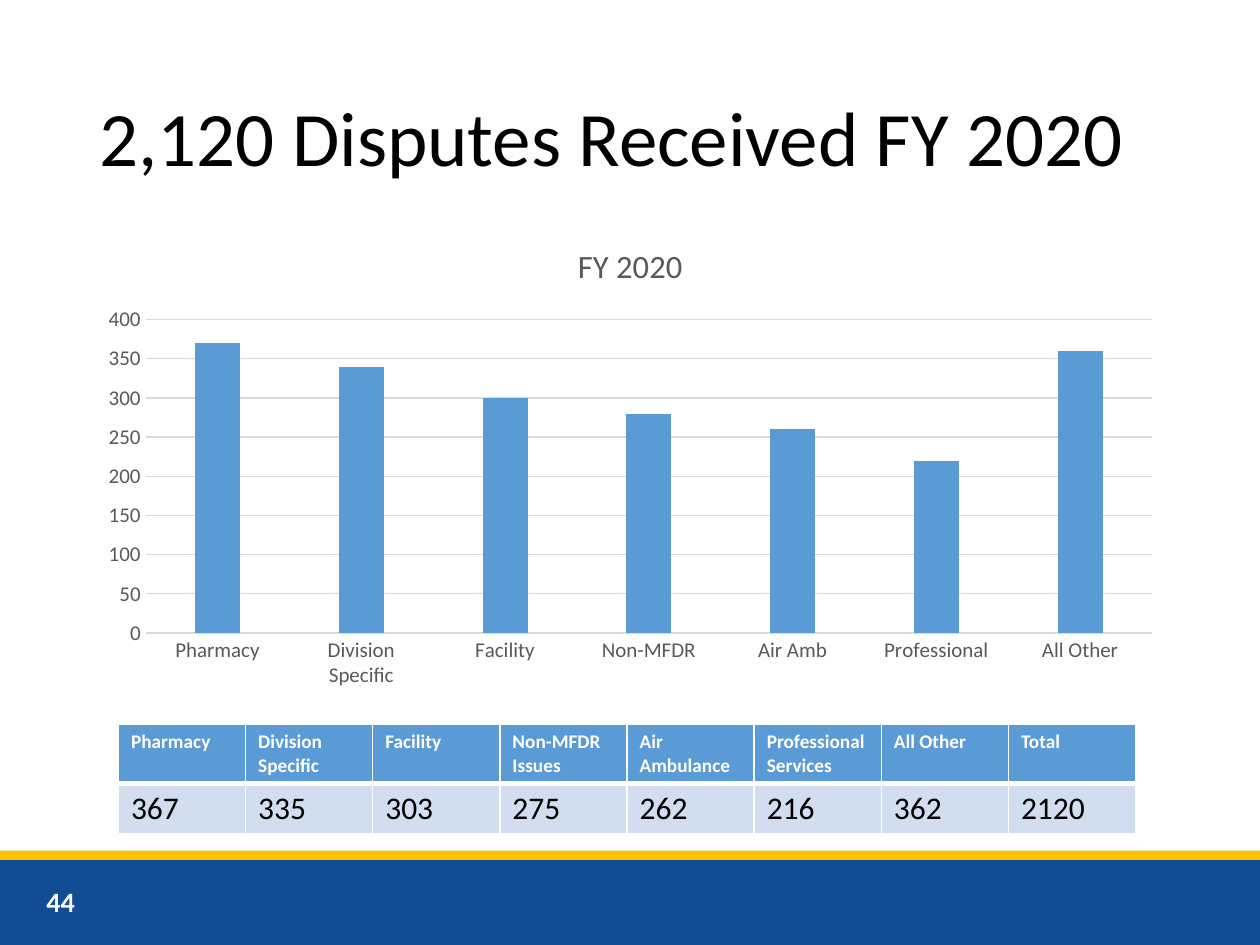
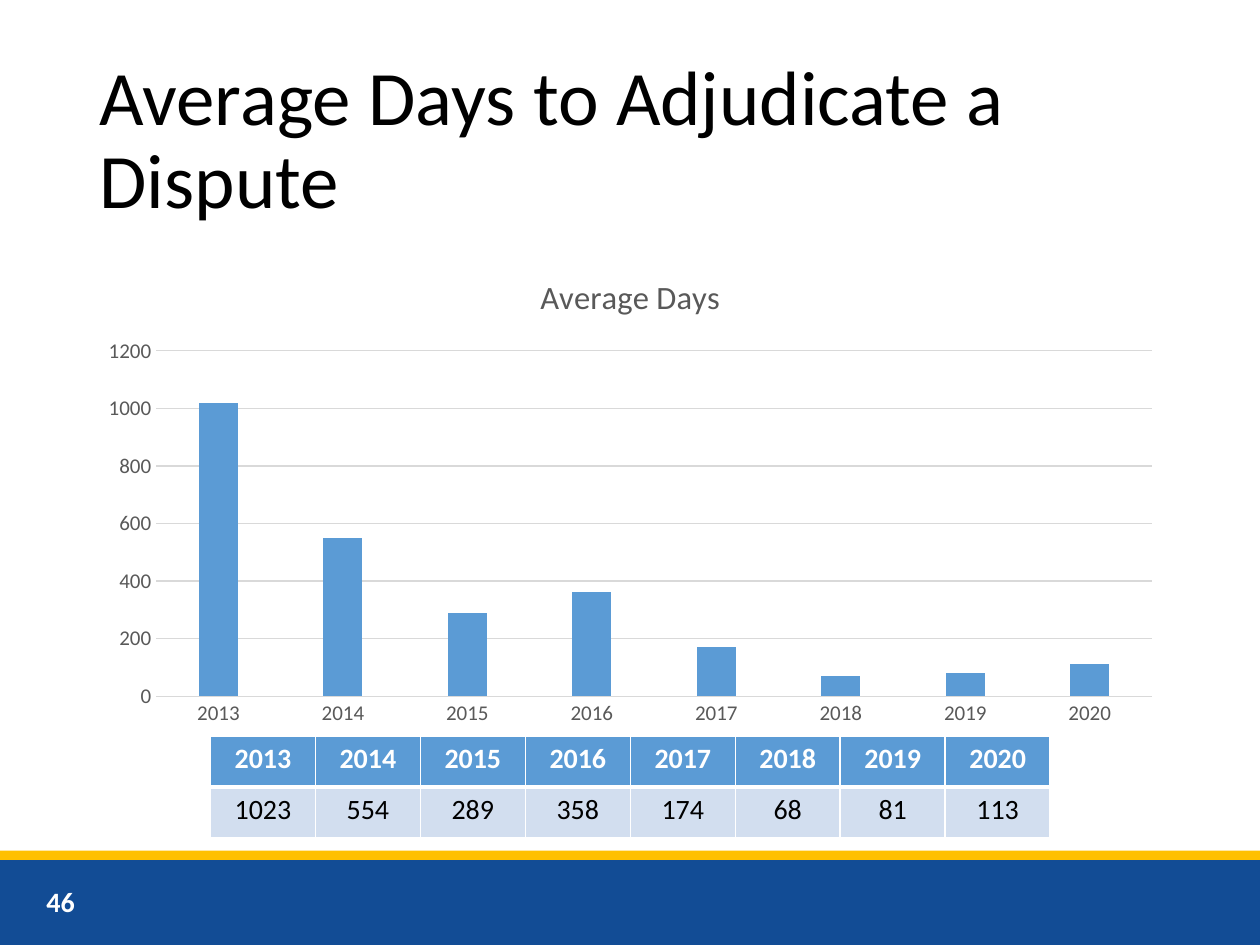
from pptx import Presentation
from pptx.chart.data import CategoryChartData
from pptx.dml.color import RGBColor
from pptx.enum.chart import XL_CHART_TYPE as ChartType, XL_TICK_MARK as TickMark
from pptx.enum.shapes import MSO_SHAPE as Preset
from pptx.enum.text import MSO_ANCHOR as Anchor, MSO_AUTO_SIZE as AutoSize, PP_ALIGN as Align
from pptx.oxml import parse_xml
from pptx.oxml.ns import nsdecls
from pptx.util import Inches, Pt

FONT = "Calibri"
COLORS = {
    "band": "124C95", "stripe": "FFC000", "bar": "5B9BD5", "value": "D2DEEF",
    "grid": "D9D9D9", "label": "595959", "text": "000000", "white": "FFFFFF",
}
SLIDE_W, SLIDE_H = Inches(10), Inches(7.5)
COL, ROW = SLIDE_W / 100, SLIDE_H / 75  # slide grid: 100 columns by 75 rows

# Boxes in grid units: left, top, width, height
STRIPE_BOX = (0, 67.5, 100, 0.75)
BAND_BOX = (0, 68.25, 100, 6.75)
NUMBER_BOX = (2.7, 69.5, 22.5, 4)


def place(box):
    left, top, width, height = box
    return [round(n) for n in (left * COL, top * ROW, width * COL, height * ROW)]


def rgb(name):
    return RGBColor.from_string(COLORS[name])


def style_font(font, size, color, bold=False):
    for attribute, value in {"name": FONT, "size": Pt(size), "bold": bold}.items():
        setattr(font, attribute, value)
    font.color.rgb = rgb(color)


def add_title(slide, box, text):
    title = slide.shapes.title
    title.left, title.top, title.width, title.height = place(box)
    frame = title.text_frame
    frame.text = text
    settings = {"word_wrap": True, "auto_size": AutoSize.NONE, "vertical_anchor": Anchor.MIDDLE}
    for attribute, value in settings.items():
        setattr(frame, attribute, value)
    heading = frame.paragraphs[0]
    heading.alignment, heading.line_spacing = Align.LEFT, 0.9
    style_font(heading.font, 44, "text")


def add_footer(slide, number):
    for box, color in ((BAND_BOX, "band"), (STRIPE_BOX, "stripe")):
        strip = slide.shapes.add_shape(Preset.RECTANGLE, *place(box))
        strip.shadow.inherit = False
        strip.fill.solid()
        strip.fill.fore_color.rgb = rgb(color)
        strip.line.fill.background()
    frame = slide.shapes.add_textbox(*place(NUMBER_BOX)).text_frame
    frame.word_wrap, frame.vertical_anchor = True, Anchor.MIDDLE
    frame.text = str(number)
    style_font(frame.paragraphs[0].font, 16, "white", bold=True)


def add_column_chart(slide, box, title, categories, values, top_value, step):
    data = CategoryChartData()
    data.categories = categories
    data.add_series("Series 1", [round(value, -1) for value in values])  # to the nearest ten
    chart = slide.shapes.add_chart(ChartType.COLUMN_CLUSTERED, *place(box), data).chart
    style_font(chart.font, 10, "text")
    chart.has_legend = False

    # Heading
    chart.has_title = True
    chart.chart_title.include_in_layout = False
    heading = chart.chart_title.text_frame
    heading.text = title
    style_font(heading.paragraphs[0].runs[0].font, 18.6, "label")

    # Columns
    plot = chart.plots[0]
    for attribute, value in {"gap_width": 219, "overlap": -27, "vary_by_categories": False}.items():
        setattr(plot, attribute, value)
    columns = plot.series[0].format.fill
    columns.solid()
    columns.fore_color.rgb = rgb("bar")

    # Axes
    for axis in (chart.category_axis, chart.value_axis):
        axis.major_tick_mark = axis.minor_tick_mark = TickMark.NONE
        style_font(axis.tick_labels.font, 12, "label")
    scale = chart.value_axis
    for attribute, value in {"minimum_scale": 0, "maximum_scale": top_value, "major_unit": step}.items():
        setattr(scale, attribute, value)
    scale.format.line.fill.background()
    for line in (chart.category_axis.format.line, scale.major_gridlines.format.line):
        line.color.rgb, line.width = rgb("grid"), Pt(0.75)


def add_borders(cell, bottom):
    properties = cell._tc.get_or_add_tcPr()
    for side, points in {"L": 1, "R": 1, "T": 1, "B": bottom}.items():
        properties.append(parse_xml(
            f'<a:ln{side} {nsdecls("a")} w="{Pt(points)}"><a:solidFill>'
            f'<a:srgbClr val="{COLORS["white"]}"/></a:solidFill></a:ln{side}>'))


def add_value_table(slide, box, heads, values, row_heights, sizes, align):
    table = slide.shapes.add_table(2, len(heads), *place(box)).table
    for column in table.columns:
        column.width = round(box[2] * COL / len(heads))
    looks = (("bar", "white", True, 3), ("value", "text", False, 1))
    for r, (texts, look) in enumerate(zip((heads, values), looks)):
        fill, color, bold, bottom = look
        table.rows[r].height = round(row_heights[r] * ROW)
        for c, text in enumerate(texts):
            cell = table.cell(r, c)
            add_borders(cell, bottom)
            cell.fill.solid()
            cell.fill.fore_color.rgb = rgb(fill)
            cell.text = str(text)
            entry = cell.text_frame.paragraphs[0]
            entry.alignment = align
            style_font(entry.runs[0].font, sizes[r], color, bold)


def add_chart_slide(deck, number, title, chart, table):
    slide = deck.slides.add_slide(deck.slide_layouts[5])
    add_footer(slide, number)
    add_title(slide, **title)
    add_column_chart(slide, **chart)
    add_value_table(slide, **table)


def main():
    deck = Presentation()
    deck.slide_width, deck.slide_height = SLIDE_W, SLIDE_H

    # Disputes received by type
    disputes = [367, 335, 303, 275, 262, 216, 362]
    add_chart_slide(
        deck, 44,
        title={"box": (6.9, 4, 86.2, 14.5), "text": "2,120 Disputes Received FY 2020"},
        chart={
            "box": (6.9, 17.55, 86.25, 37.8), "title": "FY 2020",
            "categories": ["Pharmacy", "Division Specific", "Facility", "Non-MFDR",
                           "Air Amb", "Professional", "All Other"],
            "values": disputes, "top_value": 400, "step": 50,
        },
        table={
            "box": (9.4, 57.45, 80.75, 8.7),
            "heads": ["Pharmacy", "Division Specific", "Facility", "Non-MFDR Issues",
                      "Air Ambulance", "Professional Services", "All Other", "Total"],
            "values": disputes + [sum(disputes)],
            "row_heights": (4.75, 4), "sizes": (11, 18), "align": Align.LEFT,
        })

    # Average days by year
    years = [str(year) for year in range(2013, 2021)]
    days = [1023, 554, 289, 358, 174, 68, 81, 113]
    add_chart_slide(
        deck, 46,
        title={"box": (6.9, 4, 89, 14.5), "text": "Average Days to Adjudicate a Dispute"},
        chart={
            "box": (6.9, 20, 86.25, 38.4), "title": "Average Days",
            "categories": years, "values": days, "top_value": 1200, "step": 200,
        },
        table={
            "box": (16.7, 58.4, 66.65, 8.1), "heads": years, "values": days,
            "row_heights": (4.05, 4.05), "sizes": (16, 16), "align": Align.CENTER,
        })

    deck.save("out.pptx")


if __name__ == "__main__":
    main()
